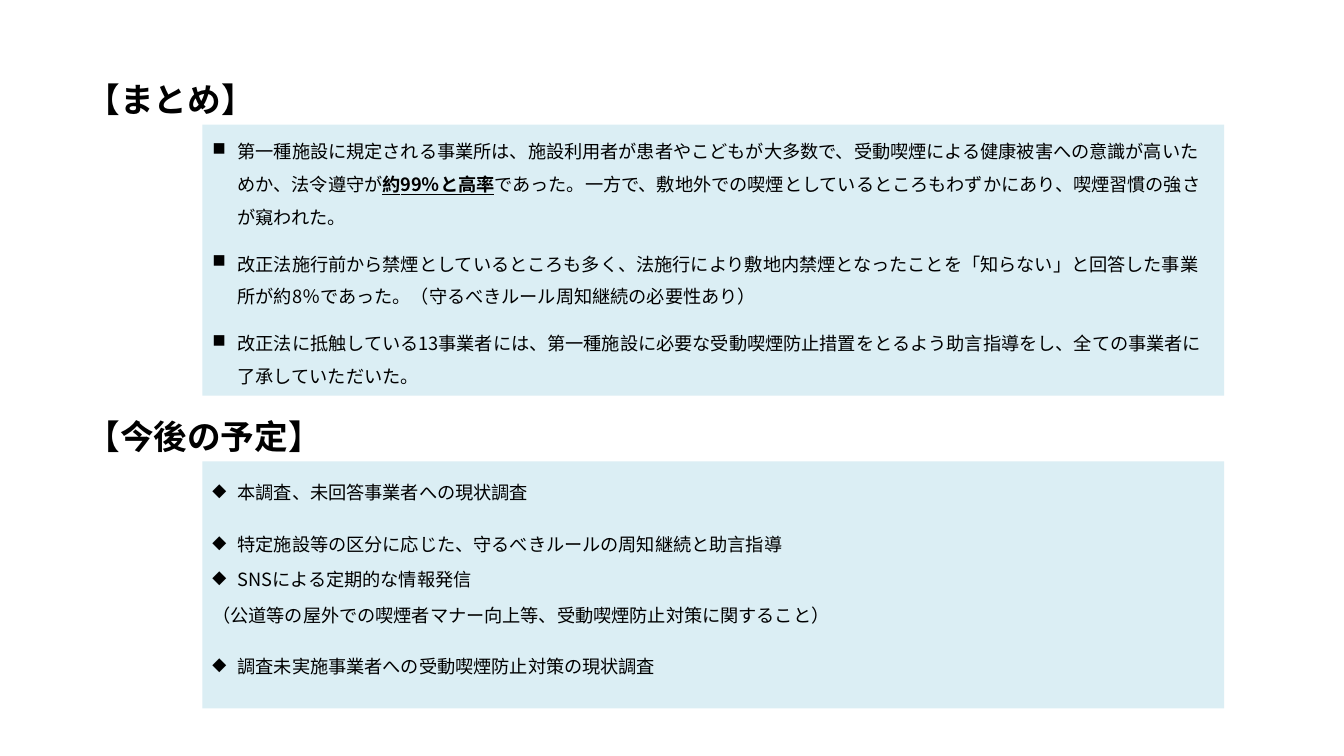
import pptx
import pptx.util
import pptx.dml.color
import pptx.enum.shapes
import pptx.enum.text
import pptx.oxml
import pptx.oxml.ns
from pptx.util import Cm, Pt

BLACK = pptx.dml.color.RGBColor(0x00, 0x00, 0x00)
PALE_BLUE = pptx.dml.color.RGBColor(0xDB, 0xEE, 0xF4)
FONT = "Noto Sans CJK JP"
HEADING_SIZE, BODY_SIZE = 24, 13
SINGLE_LINE = BODY_SIZE * 1.2
HEADING_LEFT, HEADING_HEIGHT = Cm(1.93), Cm(1.65)
PANEL_LEFT, PANEL_WIDTH = Cm(5.1), Cm(25.75)
HANGING = Cm(0.64)

SUMMARY = [
    ("■", 1.5, [
        ("第一種施設に規定される事業所は、施設利用者が患者やこどもが大多数で、"
         "受動喫煙による健康被害への意識が高いためか、法令遵守が", False),
        ("約99％と高率", True),
        ("であった。一方で、敷地外での喫煙としているところもわずかにあり、"
         "喫煙習慣の強さが窺われた。", False)]),
    ("■", 1.5, [
        ("改正法施行前から禁煙としているところも多く、法施行により敷地内禁煙と"
         "なったことを「知らない」と回答した事業所が約8％であった。"
         "（守るべきルール周知継続の必要性あり）", False)]),
    ("■", 1.5, [
        ("改正法に抵触している13事業者には、第一種施設に必要な受動喫煙防止措置を"
         "とるよう助言指導をし、全ての事業者に了承していただいた。", False)]),
]
PLANS = [
    ("◆", 1.7, [("本調査、未回答事業者への現状調査", False)]),
    ("◆", 1.7, [("特定施設等の区分に応じた、守るべきルールの周知継続と助言指導", False)]),
    ("◆", 1, [("SNSによる定期的な情報発信", False)]),
    (None, 1, [("（公道等の屋外での喫煙者マナー向上等、受動喫煙防止対策に関すること）", False)]),
    ("◆", 1.7, [("調査未実施事業者への受動喫煙防止対策の現状調査", False)]),
]
SECTIONS = [
    ("【まとめ】", Cm(1.49), Cm(9.96), SUMMARY, Cm(6.83)),
    ("【今後の予定】", Cm(9.98), Cm(15.7), PLANS, Cm(6.22)),
]


def add_run(paragraph, wording, size, bold, underline=False):
    """Add one run in the slide font, for Latin and East Asian text."""
    run = paragraph.add_run()
    run.text = wording
    run.font.size = Pt(size)
    run.font.bold = bold
    run.font.underline = underline
    run.font.color.rgb = BLACK
    run.font.name = FONT
    east_asian = pptx.oxml.parse_xml(
        f'<a:ea {pptx.oxml.ns.nsdecls("a")} typeface="{FONT}"/>')
    run.font._element.append(east_asian)


def set_bullet(paragraph, mark):
    """Give a paragraph a hanging bullet."""
    properties = paragraph._p.get_or_add_pPr()
    properties.set("marL", str(HANGING))
    properties.set("indent", str(-HANGING))
    properties.append(pptx.oxml.parse_xml(
        f'<a:buChar {pptx.oxml.ns.nsdecls("a")} char="{mark}"/>'))


def prepare_frame(shape, anchor):
    """Set wrapping and anchoring and return the text frame."""
    frame = shape.text_frame
    frame.word_wrap = True
    frame.auto_size = pptx.enum.text.MSO_AUTO_SIZE.NONE
    frame.vertical_anchor = anchor
    return frame


def fill_heading(heading, wording):
    """Write a section heading."""
    frame = prepare_frame(heading, pptx.enum.text.MSO_ANCHOR.BOTTOM)
    paragraph = frame.paragraphs[0]
    paragraph.alignment = pptx.enum.text.PP_ALIGN.LEFT
    paragraph.line_spacing = 0.9
    paragraph.space_before = Pt(10)
    add_run(paragraph, wording, HEADING_SIZE, True)


def add_panel(slide, top, height, items):
    """Add a coloured panel with its list of points."""
    panel = slide.shapes.add_shape(
        pptx.enum.shapes.MSO_SHAPE.RECTANGLE, PANEL_LEFT, top, PANEL_WIDTH, height)
    panel.shadow.inherit = False
    panel.fill.solid()
    panel.fill.fore_color.rgb = PALE_BLUE
    panel.line.fill.background()
    frame = prepare_frame(panel, pptx.enum.text.MSO_ANCHOR.TOP)
    for index, (mark, spacing, wordings) in enumerate(items):
        paragraph = frame.add_paragraph() if index else frame.paragraphs[0]
        paragraph.alignment = pptx.enum.text.PP_ALIGN.LEFT
        paragraph.line_spacing = Pt(SINGLE_LINE * spacing)
        paragraph.space_before = Pt(10)
        if mark:
            set_bullet(paragraph, mark)
        for wording, stressed in wordings:
            add_run(paragraph, wording, BODY_SIZE, stressed, stressed)


def main():
    """Build the summary and plans slide."""
    deck = pptx.Presentation()
    deck.slide_width, deck.slide_height = Cm(33.87), Cm(19.05)
    slide = deck.slides.add_slide(deck.slide_layouts[5])
    for index, (wording, top, width, items, height) in enumerate(SECTIONS):
        place = (HEADING_LEFT, top, width, HEADING_HEIGHT)
        if index:
            heading = slide.shapes.add_textbox(*place)
        else:
            heading = slide.shapes.title
            heading.left, heading.top, heading.width, heading.height = place
        fill_heading(heading, wording)
        add_panel(slide, top + HEADING_HEIGHT, height, items)
    deck.save("out.pptx")


if __name__ == "__main__":
    main()
